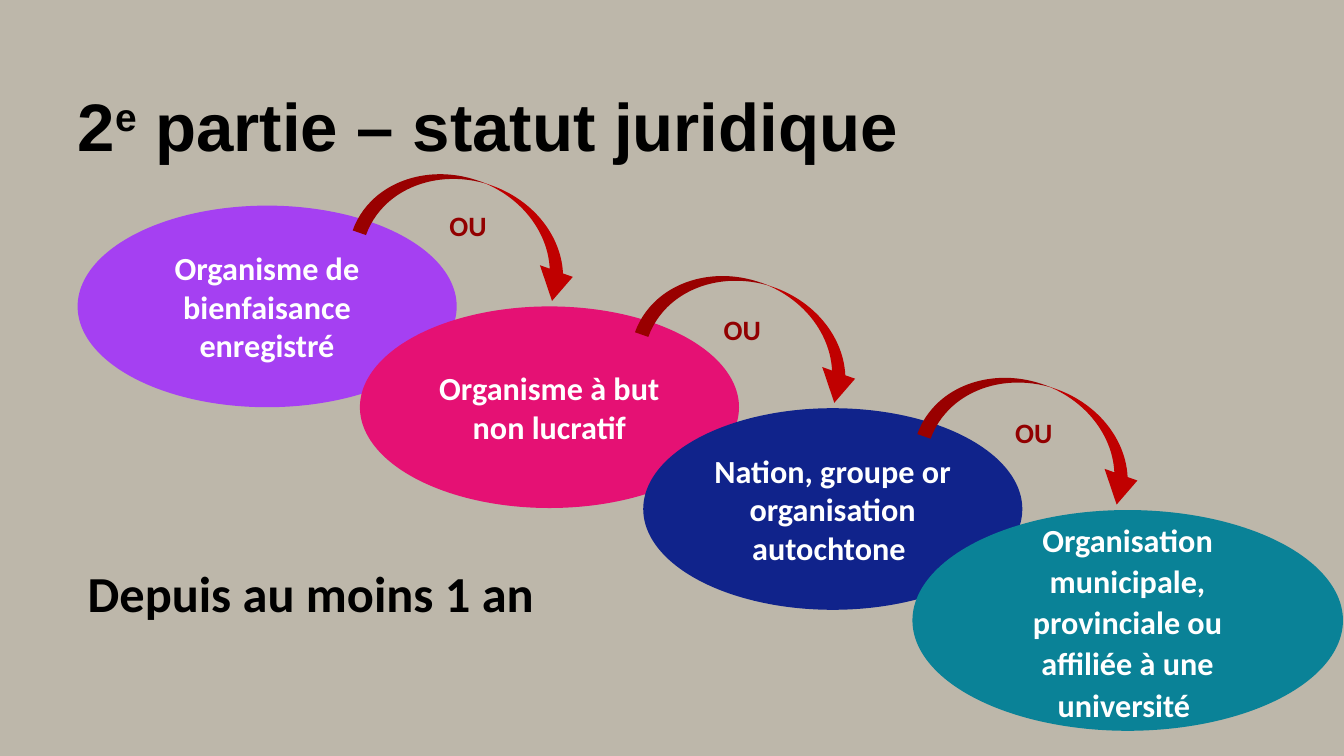
from pptx import Presentation
from pptx.dml.color import RGBColor
from pptx.enum.shapes import MSO_SHAPE as Shape
from pptx.enum.text import MSO_ANCHOR as Anchor, MSO_AUTO_SIZE as AutoSize, PP_ALIGN as Align
from pptx.oxml.ns import qn
from pptx.util import Inches, Pt
from lxml.etree import SubElement

STEP_X, STEP_Y = 2.8, 1.01
STATUSES = [
    ("Organisme de bienfaisance enregistré", "A540F2", (0.77, 2.04, 3.76, 2), {}),
    ("Organisme à but non lucratif", "E51174", (3.57, 3.04, 3.76, 2), {}),
    ("Nation, groupe or organisation autochtone ", "10238B", (6.38, 4.05, 3.76, 2), {}),
    ("Organisation municipale, provinciale ou affiliée à une université ", "0A8297",
     (9.05, 5.06, 4.27, 2.19), {"line_spacing": 1.07, "space_after": Pt(8)}),
]
OR_PLACES = [(4.36, 2.02), (7.08, 3.05), (9.97, 4.07)]


def color(value):
    """Turn a hex string into a colour."""
    return RGBColor.from_string(value)


def apply(target, values):
    """Set every attribute named in values on target."""
    for name, value in values.items():
        setattr(target, name, value)


def place(box, left, top, width, height):
    """Move and size a placeholder."""
    apply(box, {"left": Inches(left), "top": Inches(top),
                "width": Inches(width), "height": Inches(height)})


def add_span(para, text, size, hue, font="Calibri"):
    """Append a bold run to a paragraph."""
    span = para.add_run()
    span.text = text
    apply(span.font, {"name": font, "size": Pt(size), "bold": True})
    span.font.color.rgb = color(hue)
    return span


def add_filled(page, kind, bounds, hue):
    """Draw a flat preset shape without outline."""
    shape = page.shapes.add_shape(kind, *map(Inches, bounds))
    shape.shadow.inherit = False
    shape.fill.solid()
    shape.fill.fore_color.rgb = color(hue)
    shape.line.fill.background()
    return shape


def add_status(page, text, hue, bounds, spacing):
    """Draw an ellipse naming a legal status."""
    frame = add_filled(page, Shape.OVAL, bounds, hue).text_frame
    apply(frame, {"word_wrap": True, "vertical_anchor": Anchor.MIDDLE})
    para = frame.paragraphs[0]
    apply(para, {"alignment": Align.CENTER, **spacing})
    add_span(para, text, 23, "FFFFFF")


def add_or(page, left, top):
    """Write the word between two statuses."""
    frame = page.shapes.add_textbox(*map(Inches, (left, top, 0.7, 0.44))).text_frame
    apply(frame, {"word_wrap": True, "auto_size": AutoSize.SHAPE_TO_FIT_TEXT})
    add_span(frame.paragraphs[0], "OU", 20, "920000")


def add_arrow(page, index):
    """Draw the curved arrow to the next status."""
    bounds = (3.58 + index * STEP_X, 1.81 + index * STEP_Y, 2.27, 0.88)
    arrow = add_filled(page, Shape.CURVED_DOWN_ARROW, bounds, "C00000")
    arrow.rotation = 19.5
    for position, value in enumerate((0.159, 0.393, 0.334)):
        arrow.adjustments[position] = value


def fill_title(title):
    """Format the title with its superscript ordinal."""
    place(title, 0.77, 0.8, 10.36, 1.16)
    frame = title.text_frame
    apply(frame, {"margin_left": 0, "margin_top": 0, "margin_right": 0,
                  "margin_bottom": Inches(0.28), "word_wrap": True,
                  "vertical_anchor": Anchor.TOP, "auto_size": AutoSize.NONE})
    para = frame.paragraphs[0]
    apply(para, {"alignment": Align.LEFT, "line_spacing": Pt(60)})
    for text, baseline in (("2", 0), ("e", 30000), (" partie – statut juridique", 0)):
        span = add_span(para, text, 48, "000000", "Arial")
        span.font._element.set("baseline", str(baseline))


def fill_body(body):
    """Format the duration condition as plain text."""
    place(body, 0.77, 2.28, 11.23, 3.96)
    frame = body.text_frame
    apply(frame, {"word_wrap": True, "vertical_anchor": Anchor.BOTTOM,
                  "auto_size": AutoSize.NONE})
    para = frame.paragraphs[0]
    apply(para, {"alignment": Align.LEFT, "line_spacing": 0.9, "space_before": Pt(0)})
    properties = para._p.get_or_add_pPr()
    properties.set("marL", "0")
    properties.set("indent", "0")
    SubElement(properties, qn("a:buNone"))
    add_span(para, "Depuis au moins 1 an", 36, "000000")


def main():
    """Build and save the slide."""
    deck = Presentation()
    apply(deck, {"slide_width": Inches(13.33), "slide_height": Inches(7.5)})
    page = deck.slides.add_slide(deck.slide_layouts[1])
    page.background.fill.solid()
    page.background.fill.fore_color.rgb = color("BDB7AA")
    fill_title(page.shapes.title)
    fill_body(page.placeholders[1])
    for status in STATUSES:
        add_status(page, *status)
    for index, (left, top) in enumerate(OR_PLACES):
        add_or(page, left, top)
        add_arrow(page, index)
    deck.save("out.pptx")


if __name__ == "__main__":
    main()
